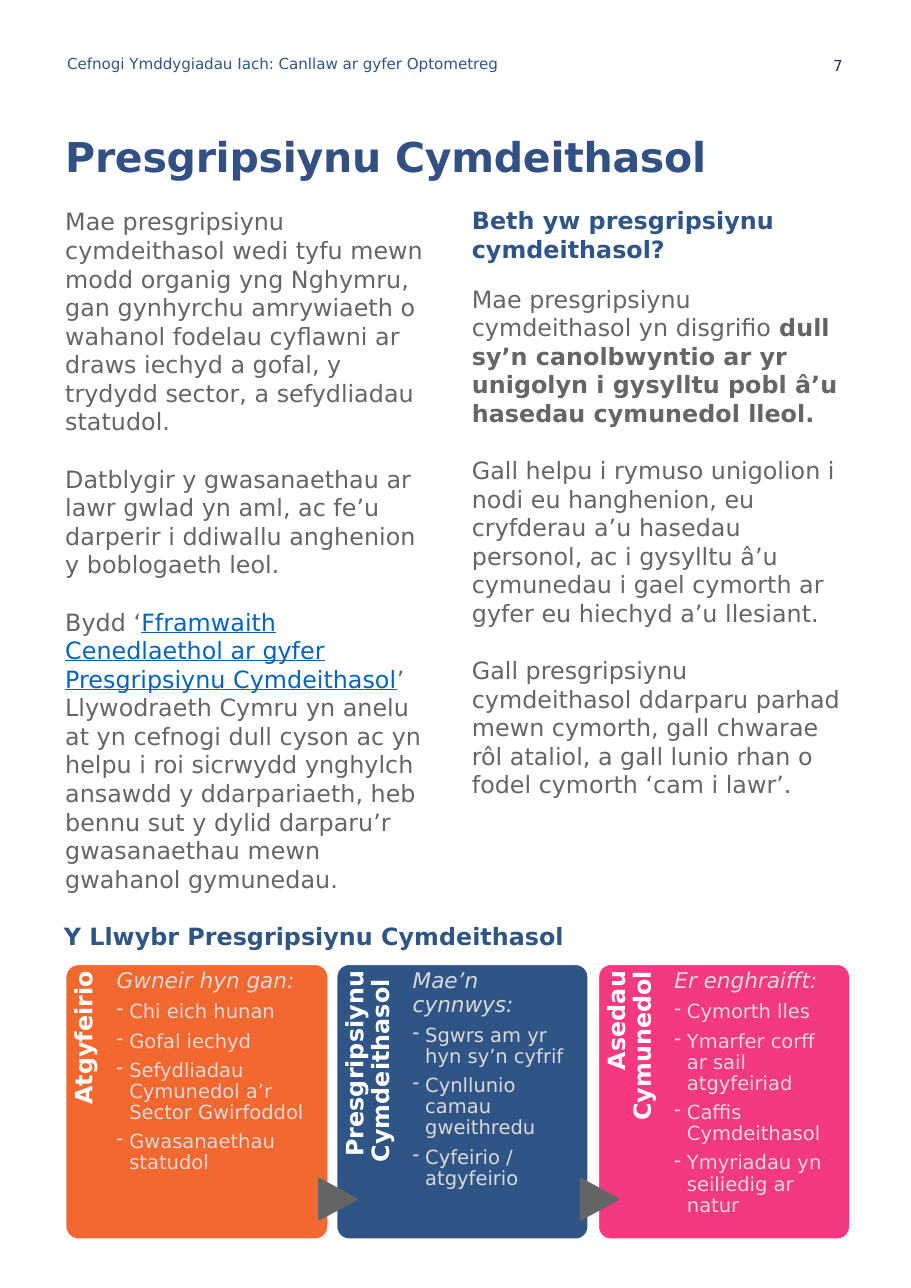
from dataclasses import dataclass

from lxml.etree import SubElement
from pptx import Presentation
from pptx.dml.color import RGBColor
from pptx.enum.shapes import MSO_SHAPE
from pptx.enum.text import MSO_ANCHOR, PP_ALIGN
from pptx.oxml.ns import qn
from pptx.util import Pt

NAVY = RGBColor(0x2F, 0x55, 0x86)
TITLE_BLUE = RGBColor(0x32, 0x50, 0x83)
PAGE_BLUE = RGBColor(0x24, 0x2F, 0x60)
LINK_BLUE = RGBColor(0x05, 0x63, 0xC1)
GREY = RGBColor(0x65, 0x65, 0x65)
PALE = RGBColor(0xD9, 0xD9, 0xD9)
WHITE = RGBColor(0xFF, 0xFF, 0xFF)
ORANGE = RGBColor(0xF2, 0x68, 0x2E)
PINK = RGBColor(0xF4, 0x38, 0x82)

FONT = "DejaVu Sans"
CARD_TOP, CARD_HEIGHT = 445.7, 127.4
DASH_INDENT = 5.8
PARAGRAPH_GAP = 13.2


@dataclass
class Style:
    """Look of a run of text."""

    size: float
    color: RGBColor
    bold: bool = False
    italic: bool = False
    underline: bool = False
    tracking: int = 0


HEADER = Style(7, NAVY)
PAGE = Style(7, PAGE_BLUE)
TITLE = Style(19, TITLE_BLUE, bold=True, tracking=-10)
HEADING = Style(11, NAVY, bold=True)
BODY = Style(11, GREY)
STRONG = Style(11, GREY, bold=True)
LINK = Style(11, LINK_BLUE, underline=True)
CARD_TITLE = Style(11, WHITE, bold=True)
CARD_INTRO = Style(10, PALE, italic=True)
CARD_ITEM = Style(9, PALE)

LEFT_COLUMN = [
    [("Mae presgripsiynu cymdeithasol wedi tyfu mewn modd organig yng Nghymru, "
      "gan gynhyrchu amrywiaeth o wahanol fodelau cyflawni ar draws iechyd a gofal, "
      "y trydydd sector, a sefydliadau statudol.", BODY)],
    [("Datblygir y gwasanaethau ar lawr gwlad yn aml, ac fe’u darperir i ddiwallu "
      "anghenion y boblogaeth leol.", BODY)],
    [("Bydd ‘", BODY),
     ("Fframwaith Cenedlaethol ar gyfer Presgripsiynu Cymdeithasol", LINK),
     ("’ Llywodraeth Cymru yn anelu at yn cefnogi dull cyson ac yn helpu i roi "
      "sicrwydd ynghylch ansawdd y ddarpariaeth, heb bennu sut y dylid darparu’r "
      "gwasanaethau mewn gwahanol gymunedau.", BODY)],
]
RIGHT_COLUMN = [
    [("Beth yw presgripsiynu cymdeithasol?", HEADING)],
    [("Mae presgripsiynu cymdeithasol yn disgrifio ", BODY),
     ("dull sy’n canolbwyntio ar yr unigolyn i gysylltu pobl â’u hasedau "
      "cymunedol lleol.", STRONG)],
    [("Gall helpu i rymuso unigolion i nodi eu hanghenion, eu cryfderau a’u hasedau "
      "personol, ac i gysylltu â’u cymunedau i gael cymorth ar gyfer eu hiechyd "
      "a’u llesiant.", BODY)],
    [("Gall presgripsiynu cymdeithasol ddarparu parhad mewn cymorth, gall chwarae rôl "
      "ataliol, a gall lunio rhan o fodel cymorth ‘cam i lawr’.", BODY)],
]
CARDS = [
    (30.2, 121.7, 23.8, ORANGE, "Atgyfeirio", "Gwneir hyn gan:",
     ["Chi eich hunan", "Gofal iechyd",
      "Sefydliadau Cymunedol a’r Sector Gwirfoddol", "Gwasanaethau statudol"]),
    (155.5, 116.6, 35.3, NAVY, "Presgripsiynu Cymdeithasol ", "Mae’n cynnwys:",
     ["Sgwrs am yr hyn sy’n cyfrif", "Cynllunio camau gweithredu",
      "Cyfeirio / atgyfeirio"]),
    (276.5, 116.6, 35.3, PINK, "Asedau Cymunedol", "Er enghraifft:",
     ["Cymorth lles", "Ymarfer corff ar sail atgyfeiriad", "Caffis Cymdeithasol",
      "Ymyriadau yn seiliedig ar natur"]),
]


def add_run(paragraph, text, style):
    """Append one styled run."""
    run = paragraph.add_run()
    run.text = text
    font = run.font
    font.name, font.size = FONT, Pt(style.size)
    font.bold, font.italic, font.underline = style.bold, style.italic, style.underline
    font.color.rgb = style.color
    if style.tracking:
        font._element.set("spc", str(style.tracking))


def add_dash(paragraph):
    """Give a paragraph a hanging dash."""
    properties = paragraph._p.get_or_add_pPr()
    properties.set("marL", str(Pt(DASH_INDENT)))
    properties.set("indent", str(-Pt(DASH_INDENT)))
    SubElement(properties, qn("a:buChar")).set("char", "-")


def add_text(slide, box, paragraphs, insets=(0, 0.7, 0, 0), gaps=(), spacing=None,
             align=PP_ALIGN.LEFT, anchor=MSO_ANCHOR.TOP, dashed_from=None):
    """Add a text box of paragraphs, each a list of runs, and return it."""
    textbox = slide.shapes.add_textbox(*map(Pt, box))
    frame = textbox.text_frame
    frame.word_wrap = True
    frame.vertical_anchor = anchor
    (frame.margin_left, frame.margin_top,
     frame.margin_right, frame.margin_bottom) = map(Pt, insets)
    for index, runs in enumerate(paragraphs):
        paragraph = frame.add_paragraph() if index else frame.paragraphs[0]
        paragraph.alignment = align
        if spacing:
            paragraph.line_spacing = spacing
        if index < len(gaps):
            paragraph.space_after = Pt(gaps[index])
        if dashed_from is not None and index >= dashed_from:
            add_dash(paragraph)
        for text, style in runs:
            add_run(paragraph, text, style)
    return textbox


def add_filled_shape(slide, kind, box, fill, line):
    """Add a preset shape with a plain fill and outline."""
    shape = slide.shapes.add_shape(kind, *map(Pt, box))
    shape.shadow.inherit = False
    shape.fill.solid()
    shape.fill.fore_color.rgb = fill
    shape.line.color.rgb = line
    shape.line.width = Pt(1)
    return shape


def add_card(slide, left, width, indent, color, title, intro, items):
    """Add one pathway step with its sideways title and dashed list."""
    card = add_filled_shape(slide, MSO_SHAPE.ROUNDED_RECTANGLE,
                            (left, CARD_TOP, width, CARD_HEIGHT), color, WHITE)
    card.adjustments[0] = 0.05
    title_width, title_height = 104.4, 23.6
    sideways = add_text(
        slide, (left + 11.9 - title_width / 2, 497.5 - title_height / 2,
                title_width, title_height),
        [[(title, CARD_TITLE)]], insets=(0, 2.9, 3.6, 0), spacing=0.9,
        align=PP_ALIGN.RIGHT)
    sideways.rotation = 270
    add_text(slide, (left + indent, CARD_TOP, width - indent - 9, CARD_HEIGHT),
             [[(intro, CARD_INTRO)]] + [[(item, CARD_ITEM)] for item in items],
             insets=(0, 2.9, 0, 0), gaps=[3.8] * len(items), spacing=0.9,
             dashed_from=1)


def add_step_arrow(slide, card_left):
    """Add the triangle that leads into a card."""
    width, height = 18.7, 17.3
    arrow = add_filled_shape(
        slide, MSO_SHAPE.FLOWCHART_EXTRACT,
        (card_left + 0.7 - width / 2, 554.4 - height / 2, width, height), GREY, GREY)
    arrow.rotation = 90


def main():
    """Build the page and save it."""
    deck = Presentation()
    deck.slide_width, deck.slide_height = Pt(421.2), Pt(595.44)
    slide = deck.slides.add_slide(deck.slide_layouts[6])
    add_text(slide, (31, 24.4, 220, 9.4),
             [[("Cefnogi Ymddygiadau Iach: Canllaw ar gyfer Optometreg", HEADER)]])
    add_text(slide, (301.7, 14.4, 95, 31.7), [[("7", PAGE)]],
             insets=(7.2, 3.6, 7.2, 3.6), align=PP_ALIGN.RIGHT,
             anchor=MSO_ANCHOR.MIDDLE)
    add_text(slide, (30.2, 59.8, 352, 23.8), [[("Presgripsiynu Cymdeithasol", TITLE)]],
             anchor=MSO_ANCHOR.BOTTOM)
    column_insets = (0, 6.5, 0, 0)
    add_text(slide, (30.2, 89.3, 170.6, 339.8), LEFT_COLUMN, column_insets,
             [PARAGRAPH_GAP] * 2)
    add_text(slide, (218.2, 88.6, 175, 296.6), RIGHT_COLUMN, column_insets,
             [9.9] + [PARAGRAPH_GAP] * 2)
    for card in CARDS:
        add_card(slide, *card)
    for card_left, *_ in CARDS[1:]:
        add_step_arrow(slide, card_left)
    add_text(slide, (29.5, 419.8, 248.4, 20.2),
             [[("Y Llwybr Presgripsiynu Cymdeithasol", HEADING)]], column_insets)
    deck.save("out.pptx")


if __name__ == "__main__":
    main()
